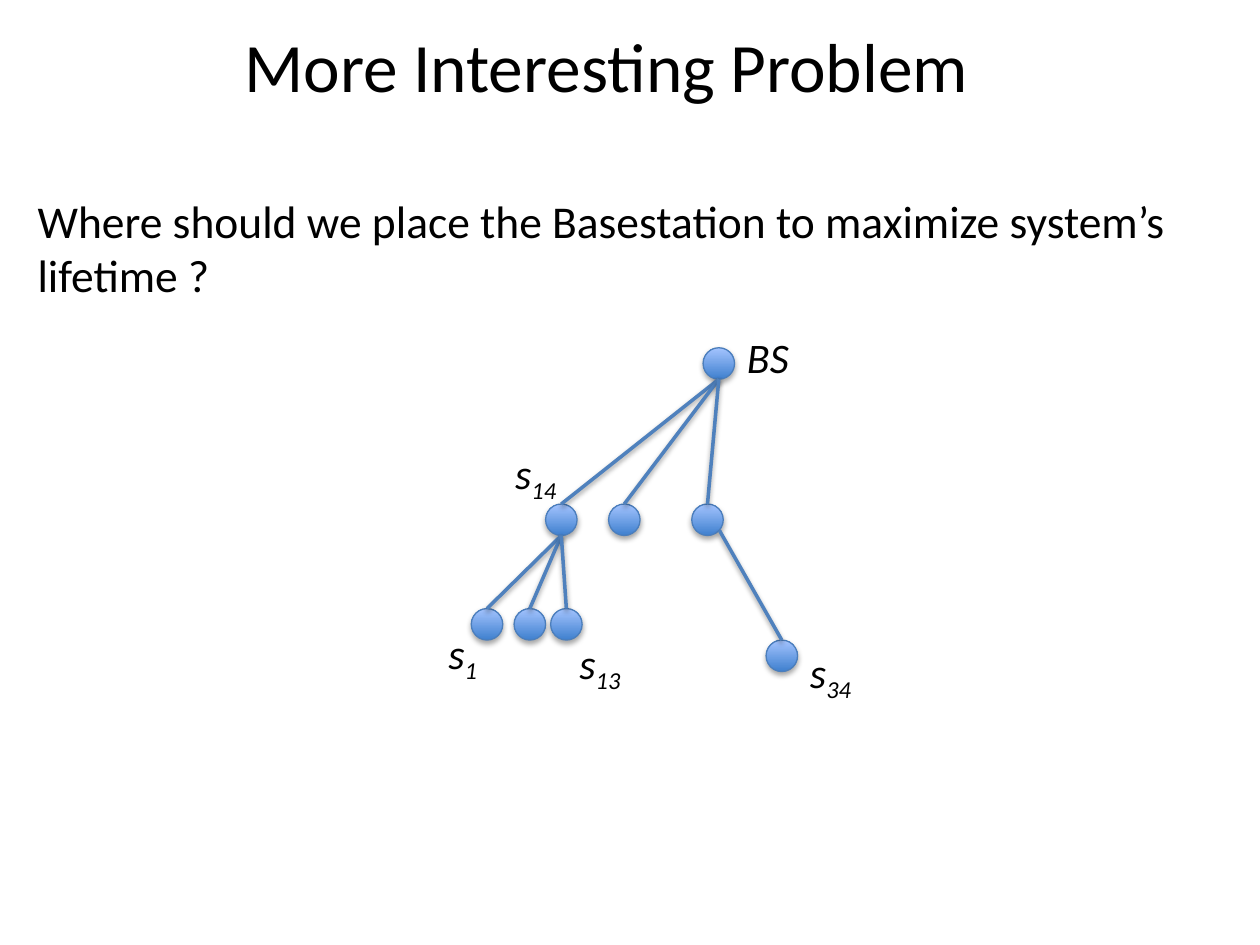
import pptx
import pptx.util
import pptx.oxml
import pptx.dml.color
import pptx.enum.text
import pptx.enum.shapes
from dataclasses import dataclass

Inches, Pt = pptx.util.Inches, pptx.util.Pt
Align, Anchor = pptx.enum.text.PP_ALIGN, pptx.enum.text.MSO_ANCHOR
Kind, Line = pptx.enum.shapes.MSO_SHAPE, pptx.enum.shapes.MSO_CONNECTOR
RGB = pptx.dml.color.RGBColor.from_string


@dataclass
class Theme:
    font: str = "Calibri"
    ink: str = "000000"
    deep: str = "3F80CE"
    light: str = "A4C4FF"
    rim: str = "4B7EBC"
    link: str = "4F81BD"
    title: float = 39.6
    body: float = 26
    label: float = 24


SHADOW = (
    '<a:effectLst xmlns:a="http://schemas.openxmlformats.org/drawingml/2006/main">'
    '<a:outerShdw blurRad="{}" dist="{}" dir="5400000" rotWithShape="0">'
    '<a:srgbClr val="000000"><a:alpha val="{}"/></a:srgbClr>'
    '</a:outerShdw></a:effectLst>'
)
SIZE = 0.25  # node diameter


class Board:
    def __init__(self, slide, theme):
        self.slide, self.theme = slide, theme

    def shade(self, shape, dist, alpha):
        """Add a soft shadow below; call after the line is set."""
        xml = SHADOW.format(Pt(3.1), Pt(dist), alpha * 1000)
        shape._element.spPr.append(pptx.oxml.parse_xml(xml))

    def style(self, run, size, italic=False):
        run.font.name = self.theme.font
        run.font.size = Pt(size)
        run.font.italic = italic
        run.font.color.rgb = RGB(self.theme.ink)

    def text(self, box, words, size, wrap=True):
        shape = self.slide.shapes.add_textbox(*map(Inches, box))
        frame = shape.text_frame
        frame.word_wrap = wrap
        frame.text = words
        self.style(frame.paragraphs[0].runs[0], size)
        return frame

    def title(self, box, words):
        frame = self.text(box, words, self.theme.title)
        frame.vertical_anchor = Anchor.MIDDLE
        frame.margin_bottom = Inches(0.28)
        frame.paragraphs[0].alignment = Align.CENTER

    def label(self, box, name, index=""):
        """Write an italic name with an optional subscript."""
        frame = self.text(box, name, self.theme.label, wrap=False)
        para = frame.paragraphs[0]
        if index:
            para.add_run().text = index
        for run in para.runs:
            self.style(run, self.theme.label, italic=True)
        if index:
            para.runs[1].font._element.set("baseline", "-25000")

    def node(self, left, top):
        dot = self.slide.shapes.add_shape(
            Kind.OVAL, *map(Inches, (left, top, SIZE, SIZE)))
        dot.fill.gradient()
        dot.fill.gradient_angle = 90
        tones = (self.theme.deep, self.theme.light)
        for place, (stop, tone) in enumerate(zip(dot.fill.gradient_stops, tones)):
            stop.color.rgb = RGB(tone)
            stop.position = place
        dot.line.color.rgb = RGB(self.theme.rim)
        dot.line.width = Pt(0.75)
        self.shade(dot, 1.8, 35)

    def link(self, start, end):
        edge = self.slide.shapes.add_connector(
            Line.STRAIGHT, *map(Inches, (*start, *end)))
        edge.line.color.rgb = RGB(self.theme.link)
        edge.line.width = Pt(2)
        self.shade(edge, 1.6, 38)


def head(node):
    return node[0] + SIZE / 2, node[1]


def foot(node):
    return node[0] + SIZE / 2, node[1] + SIZE


def main():
    deck = pptx.Presentation()
    deck.slide_width, deck.slide_height = Inches(10), Inches(7.5)
    board = Board(deck.slides.add_slide(deck.slide_layouts[6]), Theme())

    board.title((0.75, 0.33, 8.25, 0.6), "More Interesting Problem ")
    board.text(
        (0.2, 1.48, 9.8, 1.28),
        "Where should we place the Basestation to maximize system’s lifetime ?",
        board.theme.body)

    base = (5.58, 2.76)
    relays = [(x, 4) for x in (4.33, 4.83, 5.49)]
    leaves = [(x, 4.83) for x in (3.74, 4.08, 4.37)]
    far = (6.08, 5.08)
    for spot in (base, *relays, *leaves, far):
        board.node(*spot)

    for root, kids in ((relays[0], leaves), (base, relays)):
        for kid in kids:
            board.link(foot(root), head(kid))
    board.link((5.71, 4.21), head(far))

    board.label((5.83, 2.58, 0.62, 0.5), "BS")
    for left, top, width, index in (
            (3.46, 4.93, 0.47, "1"), (4.5, 5.01, 0.59, "13"),
            (3.99, 3.5, 0.59, "14"), (6.33, 5.08, 0.59, "34")):
        board.label((left, top, width, 0.5), "s", index)

    deck.save("out.pptx")


if __name__ == "__main__":
    main()
